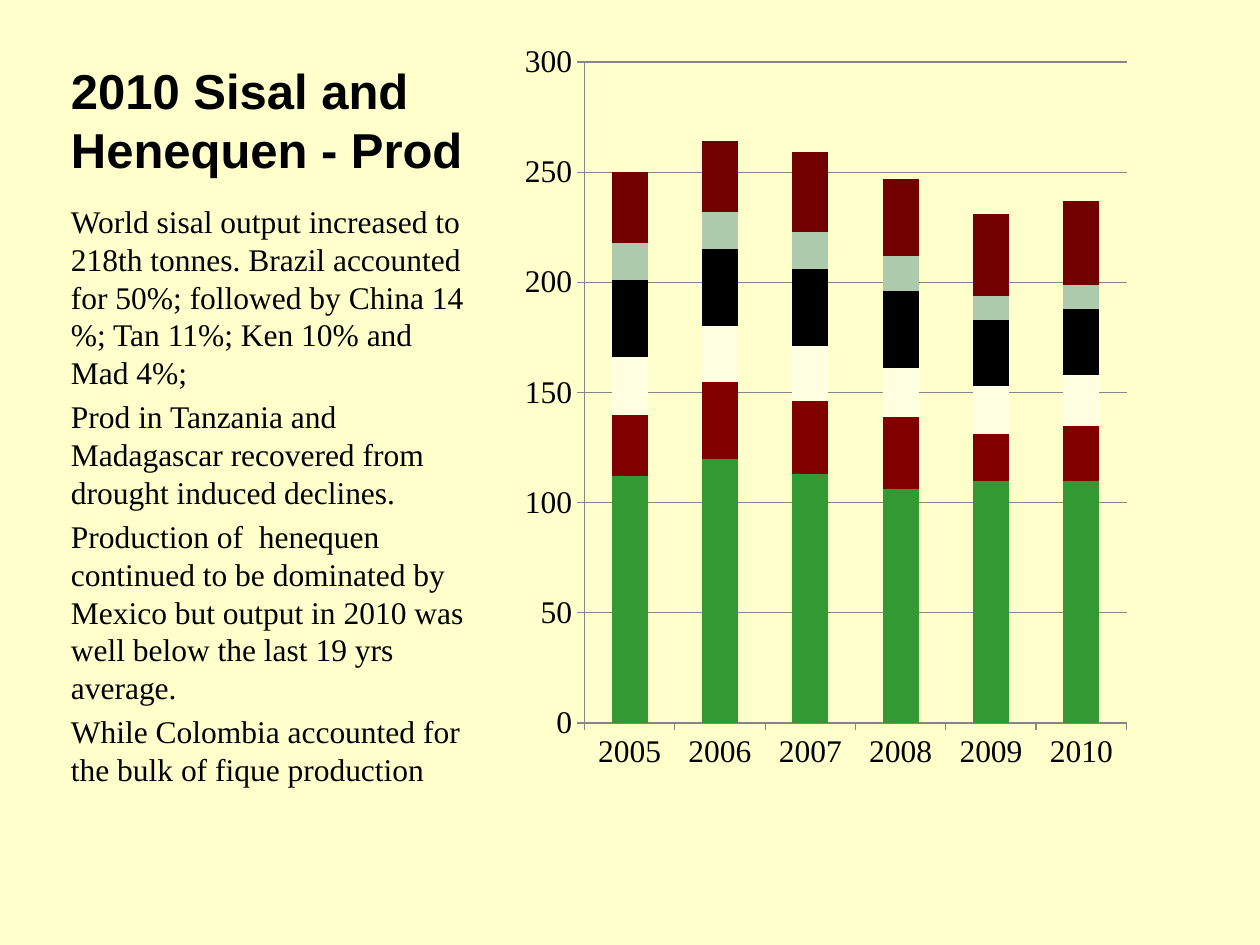
import pptx
import pptx.chart.data
import pptx.dml.color
import pptx.enum.chart
import pptx.enum.text
import pptx.oxml
import pptx.oxml.ns
import pptx.util

PX_PER_INCH = 126

THEME = {
    "background": "FFFFCC",
    "text": "000000",
    "axis": "868686",
    "title": {"name": "Arial", "size": pptx.util.Pt(28), "bold": True},
    "body": {"name": "Times New Roman", "size": pptx.util.Pt(18), "bold": False},
    "space_before": pptx.util.Pt(3.6),
}

TITLE = "2010 Sisal and Henequen - Prod"
PARAGRAPHS = [
    "World sisal output increased to 218th tonnes. Brazil accounted for 50%; "
    "followed by China 14 %; Tan 11%; Ken 10% and Mad 4%;",
    "Prod in Tanzania and Madagascar recovered from drought induced declines.",
    "Production of  henequen continued to be dominated by Mexico but output "
    "in 2010 was well below the last 19 yrs average.",
    "While Colombia accounted for the bulk of fique production",
]

YEARS = ["2005", "2006", "2007", "2008", "2009", "2010"]
SERIES = [
    ("Series 1", "339933", [112, 120, 113, 106, 110, 110]),
    ("Series 2", "800000", [28, 35, 33, 33, 21, 25]),
    ("Series 3", "FFFFE2", [26, 25, 25, 22, 22, 23]),
    ("Series 4", "000000", [35, 35, 35, 35, 30, 30]),
    ("Series 5", "ADCAAD", [17, 17, 17, 16, 11, 11]),
    ("Series 6", "730000", [32, 32, 36, 35, 37, 38]),
]
PLOT_AREA = {"x": 0.13, "y": 0.03, "w": 0.77, "h": 0.82}


def px(*lengths):
    return [round(n * pptx.util.Inches(1) / PX_PER_INCH) for n in lengths]


def rgb(value):
    return pptx.dml.color.RGBColor.from_string(value)


def set_attrs(target, values):
    for name, value in values.items():
        setattr(target, name, value)


def set_font(font, style):
    set_attrs(font, style)
    font.color.rgb = rgb(THEME["text"])


def fill_text(tf, paragraphs, style, anchor):
    side, edge = px(8, 4)
    set_attrs(tf, {
        "word_wrap": True,
        "auto_size": pptx.enum.text.MSO_AUTO_SIZE.NONE,
        "vertical_anchor": anchor,
        "margin_left": side, "margin_right": side,
        "margin_top": edge, "margin_bottom": edge,
    })
    for i, text in enumerate(paragraphs):
        p = tf.add_paragraph() if i else tf.paragraphs[0]
        p.alignment = pptx.enum.text.PP_ALIGN.LEFT
        p.space_before = THEME["space_before"] if i else 0
        r = p.add_run()
        r.text = text
        set_font(r.font, style)


def add_title(s, box):
    sp = s.shapes.title
    set_attrs(sp, dict(zip(("left", "top", "width", "height"), px(*box))))
    fill_text(sp.text_frame, [TITLE], THEME["title"],
              pptx.enum.text.MSO_ANCHOR.BOTTOM)


def add_body(s, box):
    sp = s.shapes.add_textbox(*px(*box))
    fill_text(sp.text_frame, PARAGRAPHS, THEME["body"],
              pptx.enum.text.MSO_ANCHOR.TOP)


def set_plot_area(chart, area):
    """Fix the inner plot area as fractions of the chart frame."""
    plot_area = chart._chartSpace.chart.plotArea
    for old in plot_area.findall(pptx.oxml.ns.qn("c:layout")):
        plot_area.remove(old)
    modes = "".join(f'<c:{k}Mode val="edge"/>' for k in ("x", "y"))
    sizes = "".join(f'<c:{k} val="{v}"/>' for k, v in area.items())
    plot_area.insert(0, pptx.oxml.parse_xml(
        f'<c:layout {pptx.oxml.ns.nsdecls("c")}><c:manualLayout>'
        f'<c:layoutTarget val="inner"/>{modes}{sizes}'
        '</c:manualLayout></c:layout>'))


def style_line(line):
    line.color.rgb = rgb(THEME["axis"])
    line.width = pptx.util.Pt(0.75)


def add_stacked_chart(s, box):
    data = pptx.chart.data.CategoryChartData()
    data.categories = YEARS
    for name, _, values in SERIES:
        data.add_series(name, values)
    chart = s.shapes.add_chart(
        pptx.enum.chart.XL_CHART_TYPE.COLUMN_STACKED, *px(*box), data).chart
    set_attrs(chart, {"has_legend": False, "has_title": False})
    set_font(chart.font, THEME["body"])
    set_plot_area(chart, PLOT_AREA)

    plot = chart.plots[0]
    set_attrs(plot, {"gap_width": 150, "overlap": 100,
                     "vary_by_categories": False})
    for series, (_, color, _) in zip(plot.series, SERIES):
        series.format.fill.solid()
        series.format.fill.fore_color.rgb = rgb(color)

    for axis in (chart.category_axis, chart.value_axis):
        axis.major_tick_mark = pptx.enum.chart.XL_TICK_MARK.OUTSIDE
        style_line(axis.format.line)
    set_attrs(chart.value_axis, {"minimum_scale": 0, "maximum_scale": 300,
                                 "major_unit": 50, "has_major_gridlines": True})
    style_line(chart.value_axis.major_gridlines.format.line)


def main():
    prs = pptx.Presentation()
    prs.slide_width, prs.slide_height = px(1260, 945)
    s = prs.slides.add_slide(prs.slide_layouts[5])
    s.background.fill.solid()
    s.background.fill.fore_color.rgb = rgb(THEME["background"])
    add_title(s, (63, 38, 415, 144))
    add_body(s, (63, 198, 415, 646))
    add_stacked_chart(s, (493, 38, 704, 806))
    prs.save("out.pptx")


if __name__ == "__main__":
    main()
